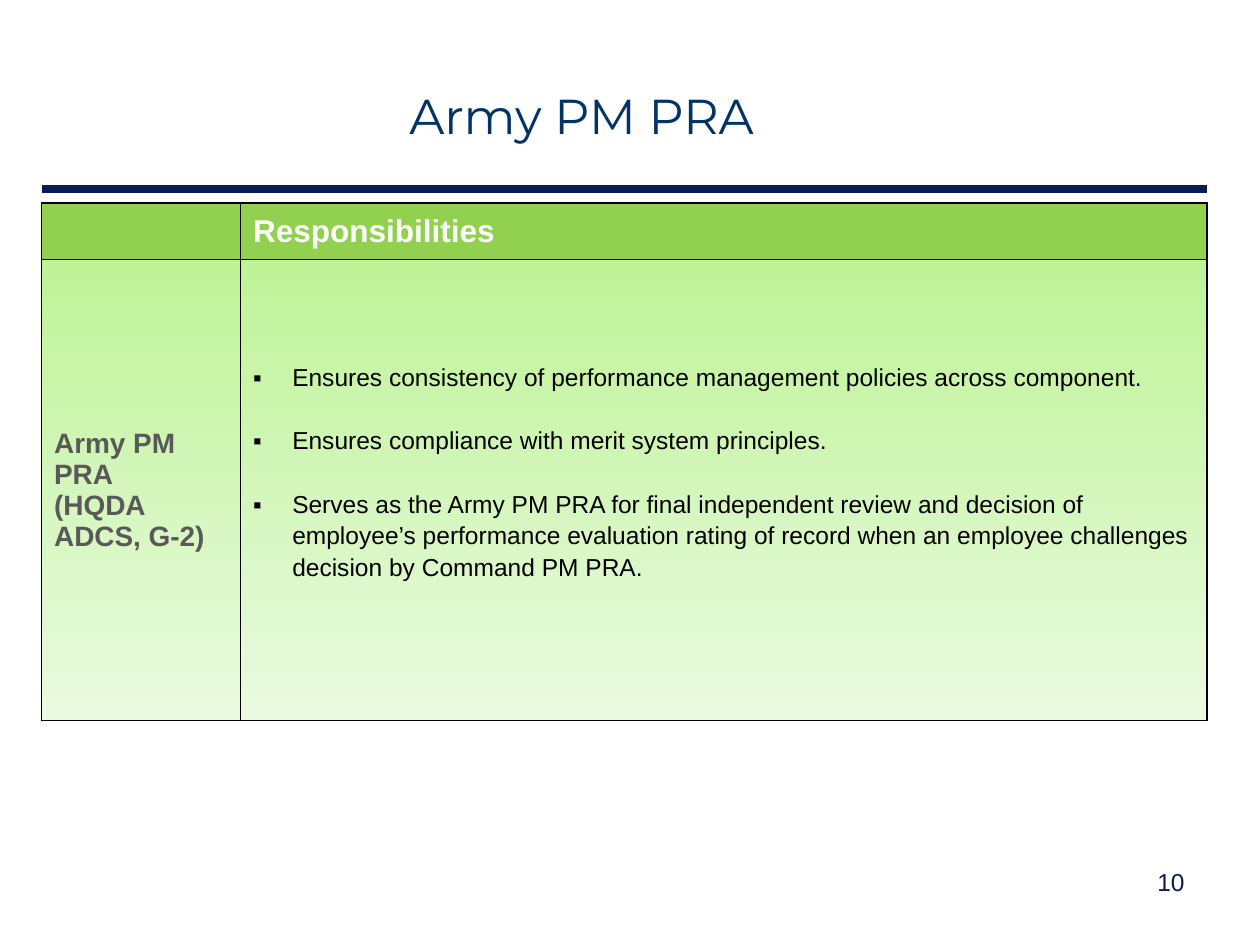
from lxml.etree import SubElement
from pptx import Presentation
from pptx.dml.color import RGBColor
from pptx.enum.shapes import MSO_CONNECTOR as Connector
from pptx.enum.text import MSO_ANCHOR as Anchor, PP_ALIGN as Align
from pptx.oxml import parse_xml
from pptx.oxml.ns import nsdecls, qn
from pptx.util import Inches, Pt

TITLE = "Army PM PRA"
PAGE_NUMBER = "10"
HEADING = "Responsibilities"
ROLE = ["Army PM PRA", "(HQDA ADCS, G-2)"]
DUTIES = [
    "Ensures consistency of performance management policies across component.",
    "Ensures compliance with merit system principles.",
    "Serves as the Army PM PRA for final independent review and decision of "
    "employee’s performance evaluation rating of record when an employee "
    "challenges decision by Command PM PRA.",
]
COLORS = {
    "title": "003366", "navy": "081D54", "header": "92D050", "white": "FFFFFF",
    "role": "595959", "black": "000000", "top": "BEF397", "bottom": "EAFAE0",
}
LEFT, WIDTH = 0.33, 9.25
COLUMNS = [1.58, 7.67]
ROWS = [0.45, 3.66]


def color(name):
    return RGBColor.from_string(COLORS[name])


def write(frame, lines, size, shade, font="Arial", bold=False, align=Align.LEFT):
    frame.word_wrap = True
    for index, line in enumerate(lines):
        para = frame.paragraphs[0] if index == 0 else frame.add_paragraph()
        para.alignment = align
        span = para.add_run()
        span.text = line
        span.font.name, span.font.size, span.font.bold = font, Pt(size), bold
        span.font.color.rgb = color(shade)


def add_text(page, at, lines, anchor, **style):
    box = page.shapes.add_textbox(*map(Inches, at))
    box.text_frame.vertical_anchor = anchor
    write(box.text_frame, lines, **style)


def add_rule(page, y):
    rule = page.shapes.add_connector(
        Connector.STRAIGHT, Inches(LEFT), Inches(y), Inches(LEFT + WIDTH), Inches(y))
    rule.line.color.rgb = color("navy")
    rule.line.width = Pt(4.5)
    SubElement(rule._element.spPr, qn("a:effectLst"))


def add_borders(cell):
    props = cell._tc.get_or_add_tcPr()
    for index, side in enumerate(("lnL", "lnR", "lnT", "lnB")):
        props.insert(index, parse_xml(
            f'<a:{side} {nsdecls("a")} w="{Pt(1)}"><a:solidFill>'
            f'<a:srgbClr val="{COLORS["black"]}"/></a:solidFill></a:{side}>'))


def fill_gradient(cell):
    cell.fill.gradient()
    cell.fill.gradient_angle = 270
    for stop, position, name in zip(cell.fill.gradient_stops, (0, 1), ("top", "bottom")):
        stop.position = position
        stop.color.rgb = color(name)


def add_bullets(frame, indent):
    for index, para in enumerate(frame.paragraphs):
        props = para._p.get_or_add_pPr()
        props.set("marL", str(Inches(indent)))
        props.set("indent", str(-Inches(indent)))
        SubElement(props, qn("a:buFont"), typeface="Arial")
        SubElement(props, qn("a:buChar"), char="▪")
        para.line_spacing = 1.15
        para.space_before = Pt(18 if index else 0)


def add_duties_table(page):
    table = page.shapes.add_table(
        len(ROWS), len(COLUMNS), Inches(LEFT), Inches(1.61),
        Inches(WIDTH), Inches(sum(ROWS))).table
    for column, width in zip(table.columns, COLUMNS):
        column.width = Inches(width)
    for row, height in zip(table.rows, ROWS):
        row.height = Inches(height)
    for index, cell in enumerate(table.iter_cells()):
        cell.vertical_anchor = Anchor.MIDDLE
        if index < len(COLUMNS):
            cell.fill.solid()
            cell.fill.fore_color.rgb = color("header")
        else:
            fill_gradient(cell)
        add_borders(cell)

    write(table.cell(0, 1).text_frame, [HEADING], 18, "white", bold=True)
    write(table.cell(1, 0).text_frame, ROLE, 16, "role", bold=True)
    duties = table.cell(1, 1)
    duties.vertical_anchor = Anchor.TOP
    duties.margin_top = Inches(0.8)
    write(duties.text_frame, DUTIES, 14, "black")
    add_bullets(duties.text_frame, 0.31)


def main():
    deck = Presentation()
    deck.slide_width, deck.slide_height = Inches(10), Inches(7.5)
    page = deck.slides.add_slide(deck.slide_layouts[6])
    add_rule(page, 1.5)
    add_text(page, (3.15, 0.3, 6.62, 1.22), [TITLE], Anchor.MIDDLE,
             size=28, shade="title", font="Montserrat")
    add_duties_table(page)
    add_text(page, (7.17, 6.83, 2.33, 0.52), [PAGE_NUMBER], Anchor.TOP,
             size=14, shade="navy", align=Align.RIGHT)
    deck.save("out.pptx")


if __name__ == "__main__":
    main()
